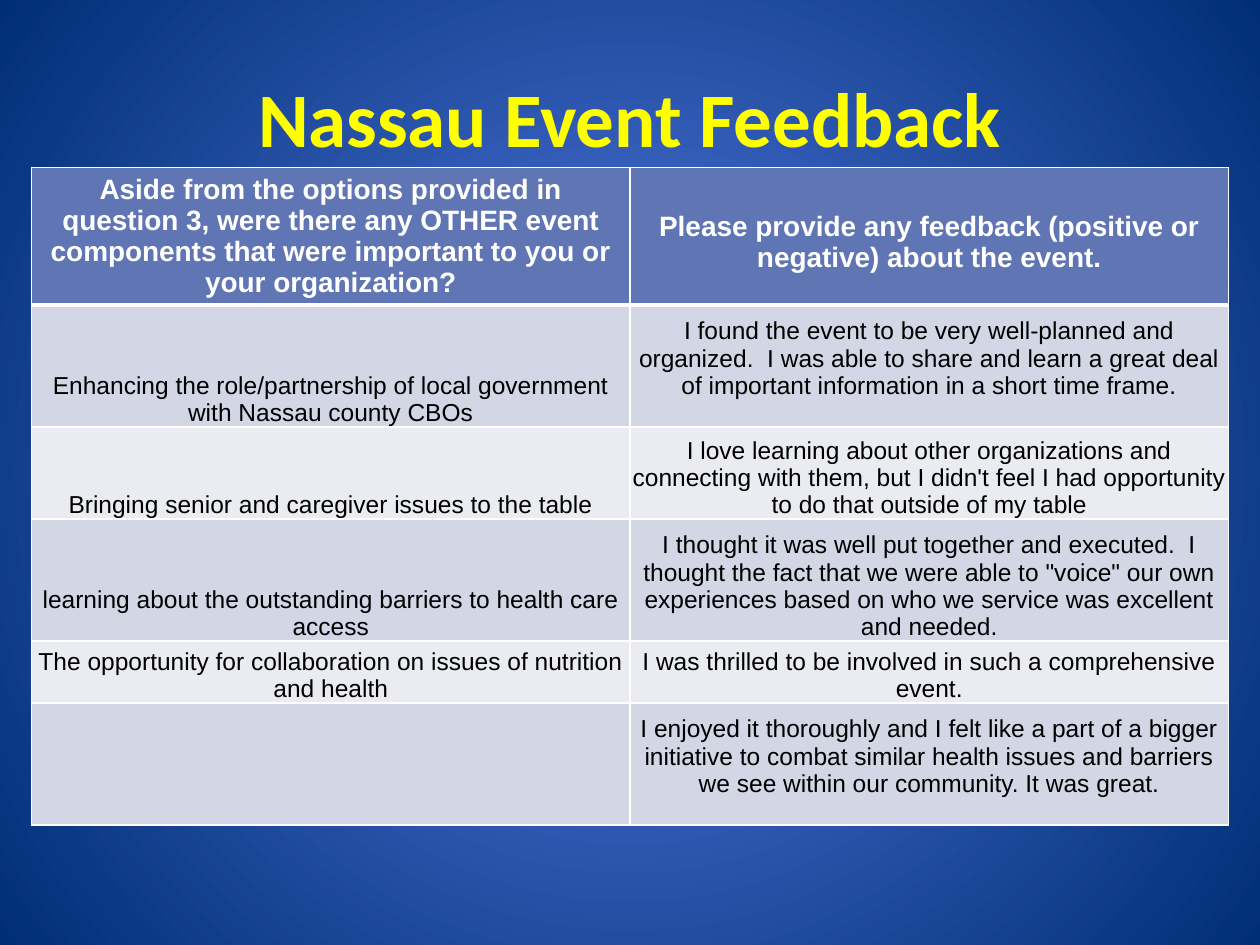
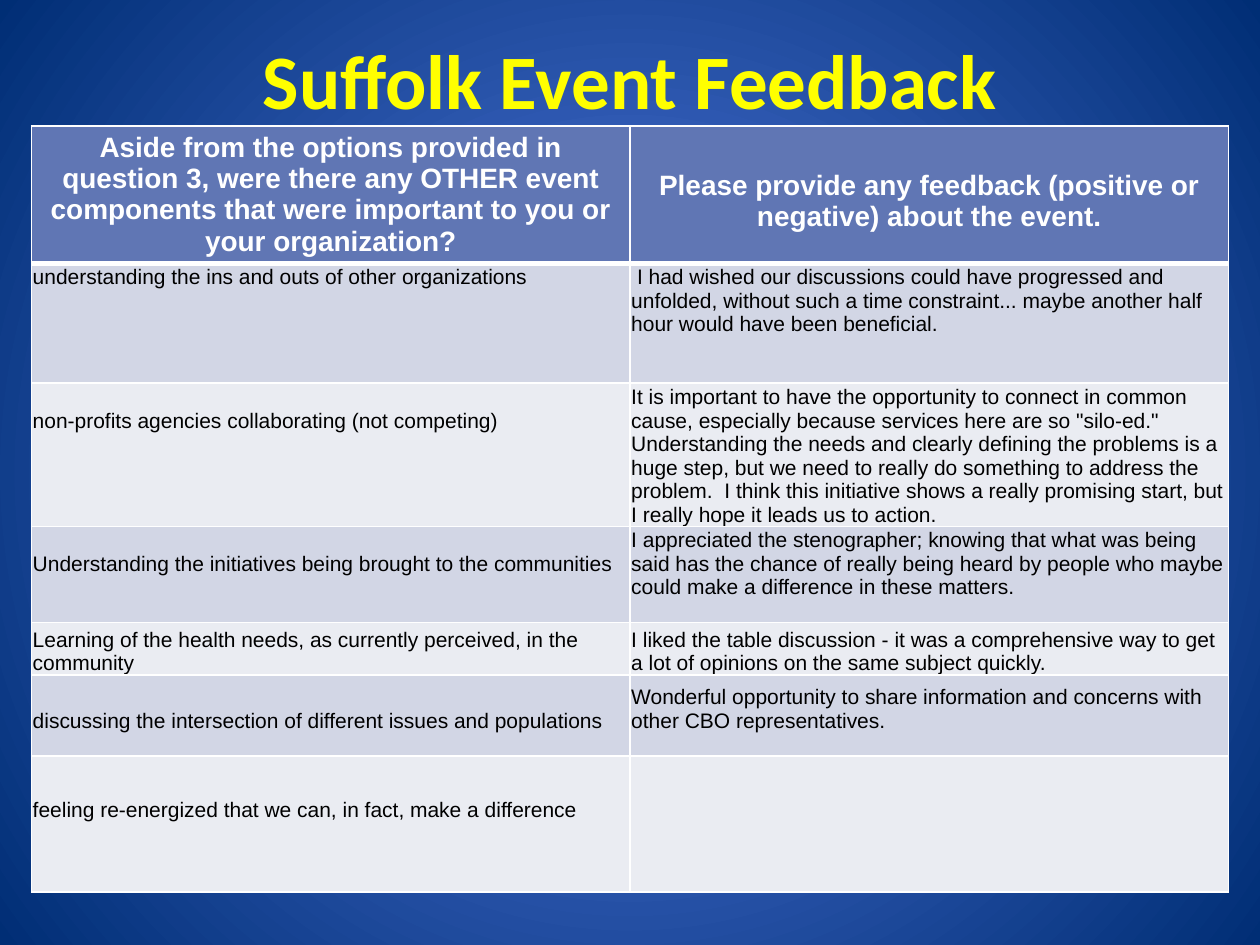
from lxml import etree
from pptx import Presentation
from pptx.dml.color import RGBColor
from pptx.enum.text import MSO_ANCHOR, PP_ALIGN
from pptx.oxml.ns import qn
from pptx.util import Inches, Pt

CENTER, LEFT = PP_ALIGN.CENTER, PP_ALIGN.LEFT
MIDDLE, BOTTOM = MSO_ANCHOR.MIDDLE, MSO_ANCHOR.BOTTOM

GLOW = RGBColor(0x54, 0x7B, 0xE2)
NAVY = RGBColor(0x00, 0x2E, 0x75)
YELLOW = RGBColor(0xFF, 0xFF, 0x00)
WHITE = RGBColor(0xFF, 0xFF, 0xFF)
BLACK = RGBColor(0x00, 0x00, 0x00)
HEADER_BLUE = RGBColor(0x60, 0x76, 0xB4)
BANDS = [RGBColor(0xD2, 0xD6, 0xE5), RGBColor(0xEA, 0xEC, 0xF2)]

TITLE_FONT, TABLE_FONT = "Calibri", "Arial"
HEADER_SIZE = 16
HEADER_HEIGHT = 1.09
COLUMN_WIDTH = 4.75
LINE_HEIGHTS = {12: 13.4, 14: 15.65, 16: 17.8}
THIN, THICK = 1, 3

QUESTIONS = (
    "Aside from the options provided in question 3, were there any OTHER event "
    "components that were important to you or your organization?",
    "Please provide any feedback (positive or negative) about the event.",
)

EVENTS = [
    {
        "title": "Nassau Event Feedback", "title_top": 0.3, "table_top": 1.33,
        "size": 14, "align": CENTER,
        "answers": [
            (0.97, ("Enhancing the role/partnership of local government with Nassau county CBOs", 0),
             ("I found the event to be very well-planned and organized.  I was able to share and "
              "learn a great deal of important information in a short time frame.", 1)),
            (0.73, ("Bringing senior and caregiver issues to the table", 0),
             ("I love learning about other organizations and connecting with them, but I didn't "
              "feel I had opportunity to do that outside of my table", 0)),
            (0.97, ("learning about the outstanding barriers to health care access", 0),
             ("I thought it was well put together and executed.  I thought the fact that we were "
              "able to \"voice\" our own experiences based on who we service was excellent and "
              "needed.", 0)),
            (0.49, ("The opportunity for collaboration on issues of nutrition and health", 0),
             ("I was thrilled to be involved in such a comprehensive event.", 0)),
            (0.97, ("", 0),
             ("I enjoyed it thoroughly and I felt like a part of a bigger initiative to combat "
              "similar health issues and barriers we see within our community. It was great.", 1)),
        ],
    },
    {
        "title": "Suffolk Event Feedback", "title_top": 0, "table_top": 1,
        "size": 12, "align": LEFT,
        "answers": [
            (0.95, ("understanding the ins and outs of other organizations", 4),
             (" I had wished our discussions could have progressed and unfolded, without such a "
              "time constraint... maybe another half hour would have been beneficial.", 2)),
            (1.14, ("non-profits agencies collaborating (not competing)", 4),
             ("It is important to have the opportunity to connect in common cause, especially "
              "because services here are so \"silo-ed.\" Understanding the needs and clearly "
              "defining the problems is a huge step, but we need to really do something to "
              "address the problem.  I think this initiative shows a really promising start, "
              "but I really hope it leads us to action.", 0)),
            (0.76, ("Understanding the initiatives being brought to the communities", 2),
             ("I appreciated the stenographer; knowing that what was being said has the chance "
              "of really being heard by people who maybe could make a difference in these "
              "matters.", 1)),
            (0.42, ("Learning of the health needs, as currently perceived, in the community", 0),
             ("I liked the table discussion - it was a comprehensive way to get a lot of "
              "opinions on the same subject quickly.", 0)),
            (0.64, ("discussing the intersection of different issues and populations", 1),
             ("Wonderful opportunity to share information and concerns with other CBO "
              "representatives.", 1)),
            (1.08, ("feeling re-energized that we can, in fact, make a difference", 3), ("", 0)),
        ],
    },
]


def paint_background(slide):
    fill = slide.background.fill
    fill.gradient()
    for stop, color, position in zip(fill.gradient_stops, (GLOW, NAVY), (0, 1)):
        stop.color.rgb = color
        stop.position = position
    gradient = next(slide.element.iter(qn("a:gradFill")))
    gradient.remove(gradient.find(qn("a:lin")))
    circle = etree.SubElement(gradient, qn("a:path"), path="circle")
    etree.SubElement(circle, qn("a:fillToRect"), l="50000", t="50000", r="50000", b="50000")


def write(paragraph, text, font_name, size, color, bold, align):
    paragraph.text = text
    paragraph.alignment = align
    font = paragraph.font
    font.name, font.size, font.bold = font_name, Pt(size), bold
    font.color.rgb = color


def add_title(slide, title, top):
    box = slide.shapes.add_textbox(Inches(0.5), Inches(top), Inches(9), Inches(1.25))
    frame = box.text_frame
    frame.word_wrap = True
    frame.vertical_anchor = MIDDLE
    write(frame.paragraphs[0], title, TITLE_FONT, 44, YELLOW, True, CENTER)


def add_borders(cell, top, bottom):
    properties = cell._tc.get_or_add_tcPr()
    for side, width in (("lnL", THIN), ("lnR", THIN), ("lnT", top), ("lnB", bottom)):
        line = etree.SubElement(properties, qn(f"a:{side}"), w=str(Pt(width)))
        solid = etree.SubElement(line, qn("a:solidFill"))
        etree.SubElement(solid, qn("a:srgbClr"), val=str(WHITE))


def fill_cell(cell, text, size, color, bold, align, background, top, bottom):
    add_borders(cell, top, bottom)
    cell.fill.solid()
    cell.fill.fore_color.rgb = background
    paragraph = cell.text_frame.paragraphs[0]
    paragraph.line_spacing = Pt(LINE_HEIGHTS[size])
    write(paragraph, text, TABLE_FONT, size, color, bold, align)


def sit_at_bottom(cell, size, lifted_lines):
    cell.vertical_anchor = BOTTOM
    cell.margin_left = cell.margin_right = cell.margin_top = Inches(0.01)
    cell.margin_bottom = Pt(LINE_HEIGHTS[size] * lifted_lines)


def add_feedback(slide, event):
    answers = event["answers"]
    heights = [HEADER_HEIGHT] + [answer[0] for answer in answers]
    table = slide.shapes.add_table(
        len(heights), len(QUESTIONS), Inches(0.25), Inches(event["table_top"]),
        Inches(COLUMN_WIDTH * len(QUESTIONS)), Inches(sum(heights))).table
    for column in table.columns:
        column.width = Inches(COLUMN_WIDTH)
    for row, height in zip(table.rows, heights):
        row.height = Inches(height)

    for column, question in enumerate(QUESTIONS):
        fill_cell(table.cell(0, column), question, HEADER_SIZE, WHITE, True, CENTER,
                  HEADER_BLUE, THIN, THICK)
    sit_at_bottom(table.cell(0, 1), HEADER_SIZE, 1)

    size = event["size"]
    for row, (_, *pair) in enumerate(answers, 1):
        for column, (text, lifted_lines) in enumerate(pair):
            cell = table.cell(row, column)
            fill_cell(cell, text, size, BLACK, False, event["align"],
                      BANDS[(row - 1) % 2], THICK if row == 1 else THIN, THIN)
            sit_at_bottom(cell, size, lifted_lines)


def main():
    deck = Presentation()
    deck.slide_width, deck.slide_height = Inches(10), Inches(7.5)
    for event in EVENTS:
        slide = deck.slides.add_slide(deck.slide_layouts[6])
        paint_background(slide)
        add_title(slide, event["title"], event["title_top"])
        add_feedback(slide, event)
    deck.save("out.pptx")


if __name__ == "__main__":
    main()
